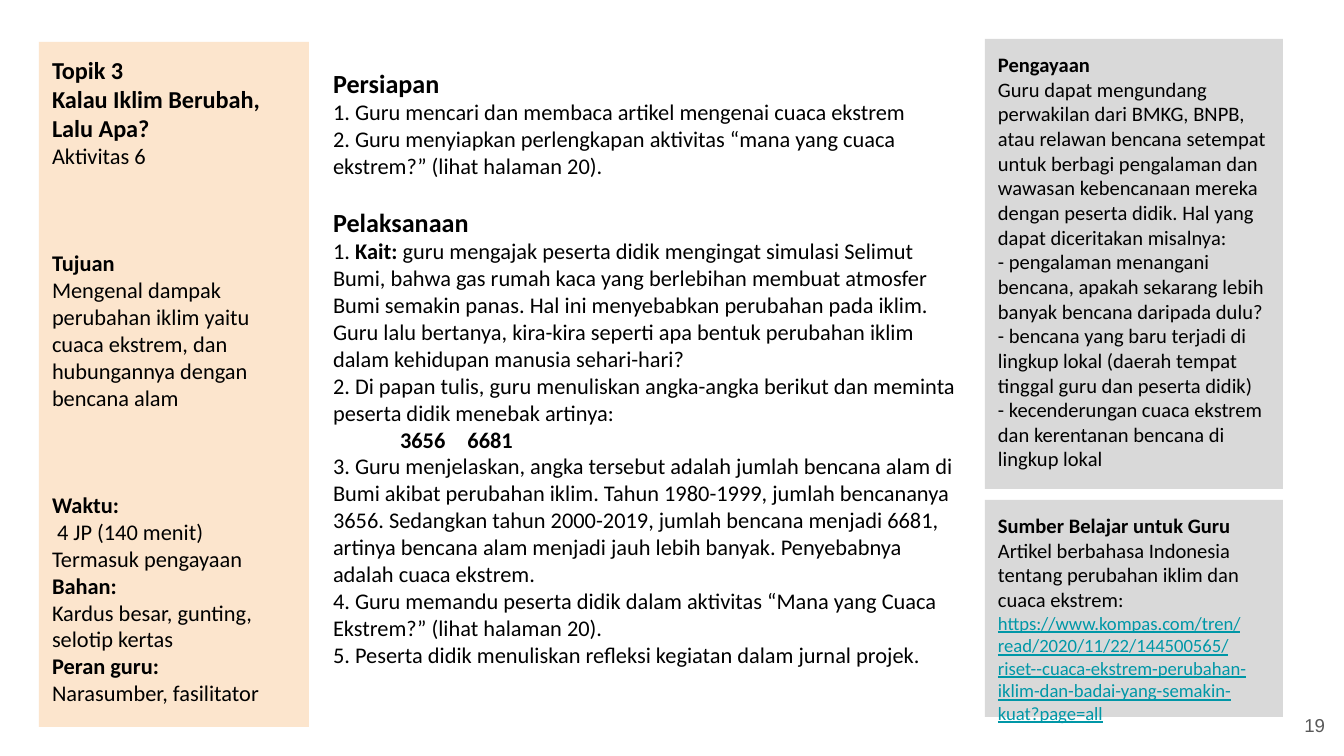
import pptx
import pptx.util
import pptx.dml.color
import pptx.enum.shapes
import pptx.enum.text
import lxml.etree
from dataclasses import dataclass

SLIDE = (1344, 756)
INSET = 13
NUMBER_INDENT = 67
NUMBER_TAB = 269


@dataclass(frozen=True)
class Style:
    size: int
    bold: bool = False
    color: str = "000000"
    underline: bool = False
    font: str = "Calibri"


THEME = {
    "peach": "FCE5CD",
    "grey": "D9D9D9",
    "section": Style(14, True),
    "topic": Style(13, True),
    "label": Style(12, True),
    "body": Style(12),
    "side label": Style(11, True),
    "side": Style(11),
    "link": Style(10, color="0097A7", underline=True),
    "page number": Style(10, color="595959", font="Arial"),
    "line gap": 14.5,
    "block gap": 43,
}

STEPS = [
    ("section", "Persiapan"),
    ("body", "1. Guru mencari dan membaca artikel mengenai cuaca ekstrem"),
    ("body", "2. Guru menyiapkan perlengkapan aktivitas “mana yang cuaca ekstrem?” (lihat halaman 20)."),
    ("section", "Pelaksanaan", "line gap"),
    [
        ("body", "1. "),
        ("label", "Kait:"),
        ("body", " guru mengajak peserta didik mengingat simulasi Selimut Bumi, bahwa gas rumah kaca yang "
                 "berlebihan membuat atmosfer Bumi semakin panas. Hal ini menyebabkan perubahan pada iklim. "
                 "Guru lalu bertanya, kira-kira seperti apa bentuk perubahan iklim dalam kehidupan manusia "
                 "sehari-hari?"),
    ],
    ("body", "2. Di papan tulis, guru menuliskan angka-angka berikut dan meminta peserta didik menebak artinya:"),
    ("label", "3656\t6681"),
    ("body", "3. Guru menjelaskan, angka tersebut adalah jumlah bencana alam di Bumi akibat perubahan iklim. "
             "Tahun 1980-1999, jumlah bencananya 3656. Sedangkan tahun 2000-2019, jumlah bencana menjadi 6681, "
             "artinya bencana alam menjadi jauh lebih banyak. Penyebabnya adalah cuaca ekstrem."),
    ("body", "4. Guru memandu peserta didik dalam aktivitas “Mana yang Cuaca Ekstrem?” (lihat halaman 20)."),
    ("body", "5. Peserta didik menuliskan refleksi kegiatan dalam jurnal projek."),
]

OVERVIEW = [
    ("topic", "Topik 3"),
    ("topic", "Kalau Iklim Berubah, Lalu Apa?"),
    ("body", "Aktivitas 6"),
    ("label", "Tujuan", "block gap"),
    ("body", "Mengenal dampak perubahan iklim yaitu cuaca ekstrem, dan hubungannya dengan bencana alam"),
    ("label", "Waktu:", "block gap"),
    ("body", " 4 JP (140 menit)"),
    ("body", "Termasuk pengayaan"),
    ("label", "Bahan:"),
    ("body", "Kardus besar, gunting, selotip kertas"),
    ("label", "Peran guru:"),
    ("body", "Narasumber, fasilitator"),
]

ENRICHMENT = [
    ("side label", "Pengayaan"),
    ("side", "Guru dapat mengundang perwakilan dari BMKG, BNPB, atau relawan bencana setempat untuk berbagi "
             "pengalaman dan wawasan kebencanaan mereka dengan peserta didik. Hal yang dapat diceritakan misalnya:"),
    ("side", "- pengalaman menangani bencana, apakah sekarang lebih banyak bencana daripada dulu?"),
    ("side", "- bencana yang baru terjadi di lingkup lokal (daerah tempat tinggal guru dan peserta didik)"),
    ("side", "- kecenderungan cuaca ekstrem dan kerentanan bencana di lingkup lokal"),
]

SOURCES = [
    ("side label", "Sumber Belajar untuk Guru"),
    ("side", "Artikel berbahasa Indonesia tentang perubahan iklim dan cuaca ekstrem:"),
    ("link", "https://www.kompas.com/tren/read/2020/11/22/144500565/"
             "riset--cuaca-ekstrem-perubahan-iklim-dan-badai-yang-semakin-kuat?page=all"),
]

PANELS = [
    ((320, 54, 653, 633), None, STEPS),
    ((39, 42, 270, 685), "peach", OVERVIEW),
    ((985, 39, 298, 450), "grey", ENRICHMENT),
    ((985, 500, 298, 217), "grey", SOURCES),
    ((1257, 696, 81, 58), None, [("page number", "19")]),
]


def px(length):
    return pptx.util.Emu(round(length * 914400 / 134.4))


def rgb(value):
    return pptx.dml.color.RGBColor.from_string(value)


def format_span(span, style):
    span.font.name = style.font
    span.font.size = pptx.util.Pt(style.size)
    span.font.bold = style.bold
    span.font.underline = style.underline
    span.font.color.rgb = rgb(style.color)


def add_number_tab(para):
    properties = para._p.get_or_add_pPr()
    properties.set("marL", "0")
    properties.set("indent", str(px(NUMBER_INDENT)))
    namespace = "{http://schemas.openxmlformats.org/drawingml/2006/main}"
    tabs = lxml.etree.SubElement(properties, namespace + "tabLst")
    lxml.etree.SubElement(tabs, namespace + "tab", pos=str(px(NUMBER_TAB)), algn="l")


def write_para(para, entry):
    spans = entry if isinstance(entry, list) else [entry]
    para.alignment = pptx.enum.text.PP_ALIGN.LEFT
    for role, text, *gap in spans:
        if gap:
            para.space_before = pptx.util.Pt(THEME[gap[0]])
        if "\t" in text:
            add_number_tab(para)
        if role == "page number":
            para.alignment = pptx.enum.text.PP_ALIGN.RIGHT
        span = para.add_run()
        span.text = text
        format_span(span, THEME[role])


def add_panel(page, place, fill, entries):
    bounds = [px(length) for length in place]
    if fill:
        box = page.shapes.add_shape(pptx.enum.shapes.MSO_SHAPE.RECTANGLE, *bounds)
        box.shadow.inherit = False
        box.fill.solid()
        box.fill.fore_color.rgb = rgb(THEME[fill])
        box.line.fill.background()
    else:
        box = page.shapes.add_textbox(*bounds)
    frame = box.text_frame
    frame.word_wrap = True
    anchor = pptx.enum.text.MSO_ANCHOR
    frame.vertical_anchor = anchor.MIDDLE if entries[0][0] == "page number" else anchor.TOP
    frame.margin_left = frame.margin_right = px(INSET)
    frame.margin_top = frame.margin_bottom = px(INSET)
    for index, entry in enumerate(entries):
        write_para(frame.add_paragraph() if index else frame.paragraphs[0], entry)


def main():
    deck = pptx.Presentation()
    deck.slide_width, deck.slide_height = map(px, SLIDE)
    page = deck.slides.add_slide(deck.slide_layouts[6])
    for place, fill, entries in PANELS:
        add_panel(page, place, fill, entries)
    deck.save("out.pptx")


if __name__ == "__main__":
    main()
